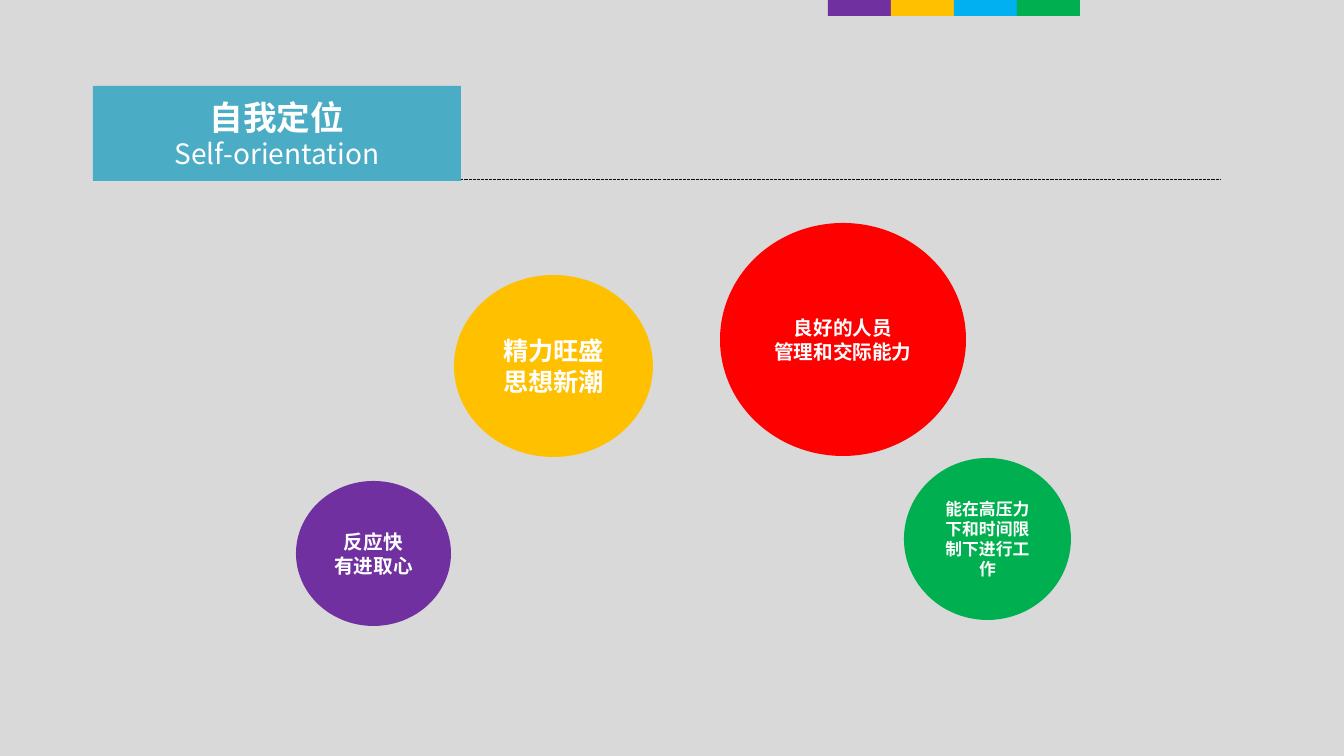
from lxml.etree import SubElement
from pptx import Presentation
from pptx.dml.color import RGBColor
from pptx.enum.dml import MSO_LINE
from pptx.enum.shapes import MSO_CONNECTOR, MSO_SHAPE
from pptx.enum.text import MSO_ANCHOR, MSO_AUTO_SIZE, PP_ALIGN
from pptx.oxml.ns import qn
from pptx.util import Pt

PX = 914400 / 100.8
FONT = "Noto Sans CJK SC"

GREY = RGBColor(0xD9, 0xD9, 0xD9)
INK = RGBColor(0x0D, 0x0D, 0x0D)
WHITE = RGBColor(0xFF, 0xFF, 0xFF)
TEAL = RGBColor(0x4B, 0xAC, 0xC6)
PURPLE = RGBColor(0x70, 0x30, 0xA0)
AMBER = RGBColor(0xFF, 0xC0, 0x00)
BLUE = RGBColor(0x00, 0xB0, 0xF0)
GREEN = RGBColor(0x00, 0xB0, 0x50)
RED = RGBColor(0xFF, 0x00, 0x00)

TAB_COLOURS = [PURPLE, AMBER, BLUE, GREEN]
STRENGTHS = [
    ((454, 275, 199, 182), AMBER, 18, ["精力旺盛", "思想新潮"]),
    ((296, 481, 155, 145), PURPLE, 14, ["反应快", "有进取心"]),
    ((720, 223, 246, 233), RED, 14, ["良好的人员", "管理和交际能力"]),
    ((904, 458, 167, 162), GREEN, 12, ["能在高压力下和时间限制下进行工作"]),
]


def emu(*lengths):
    return [round(length * PX) for length in lengths]


def apply(target, settings):
    for name, value in settings.items():
        setattr(target, name, value)


def write(shape, lines):
    frame = shape.text_frame
    apply(frame, {"word_wrap": True, "auto_size": MSO_AUTO_SIZE.NONE,
                  "vertical_anchor": MSO_ANCHOR.MIDDLE})
    for index, (text, size, bold) in enumerate(lines):
        para = frame.add_paragraph() if index else frame.paragraphs[0]
        para.alignment = PP_ALIGN.CENTER
        span = para.add_run()
        span.text = text
        apply(span.font, {"size": Pt(size), "bold": bold, "name": FONT})
        span.font.color.rgb = WHITE
        SubElement(span.font._element, qn("a:ea"), typeface=FONT)


def add_block(page, kind, box, colour):
    block = page.shapes.add_shape(kind, *emu(*box))
    block.shadow.inherit = False
    block.fill.solid()
    block.fill.fore_color.rgb = colour
    block.line.fill.background()
    return block


def add_tabs(page, box):
    left, top, width, height = box
    step = width // len(TAB_COLOURS)
    for index, colour in enumerate(TAB_COLOURS):
        add_block(page, MSO_SHAPE.RECTANGLE,
                  (left + index * step, top, step, height), colour)


def add_heading(page, box, rule_right):
    left, top, width, height = box
    title = page.shapes.title
    apply(title, dict(zip(("left", "top", "width", "height"), emu(*box))))
    title.fill.solid()
    title.fill.fore_color.rgb = TEAL
    write(title, [("自我定位", 24, True), ("Self-orientation", 20, False)])

    base = top + height - 1
    rule = page.shapes.add_connector(
        MSO_CONNECTOR.STRAIGHT, *emu(left, base, rule_right, base))
    rule.line.color.rgb = INK
    apply(rule.line, {"width": Pt(0.75), "dash_style": MSO_LINE.SQUARE_DOT})
    SubElement(rule.element.spPr, qn("a:effectLst"))
    title.element.addprevious(rule.element)


def add_strength(page, box, colour, size, lines):
    circle = add_block(page, MSO_SHAPE.OVAL, box, colour)
    write(circle, [(line, size, True) for line in lines])


def main():
    deck = Presentation()
    deck.slide_width, deck.slide_height = emu(1344, 756)
    page = deck.slides.add_slide(deck.slide_layouts[5])
    page.background.fill.solid()
    page.background.fill.fore_color.rgb = GREY
    add_tabs(page, (828, 0, 252, 16))
    add_heading(page, (93, 86, 368, 95), 1220)
    for strength in STRENGTHS:
        add_strength(page, *strength)
    deck.save("out.pptx")


if __name__ == "__main__":
    main()
